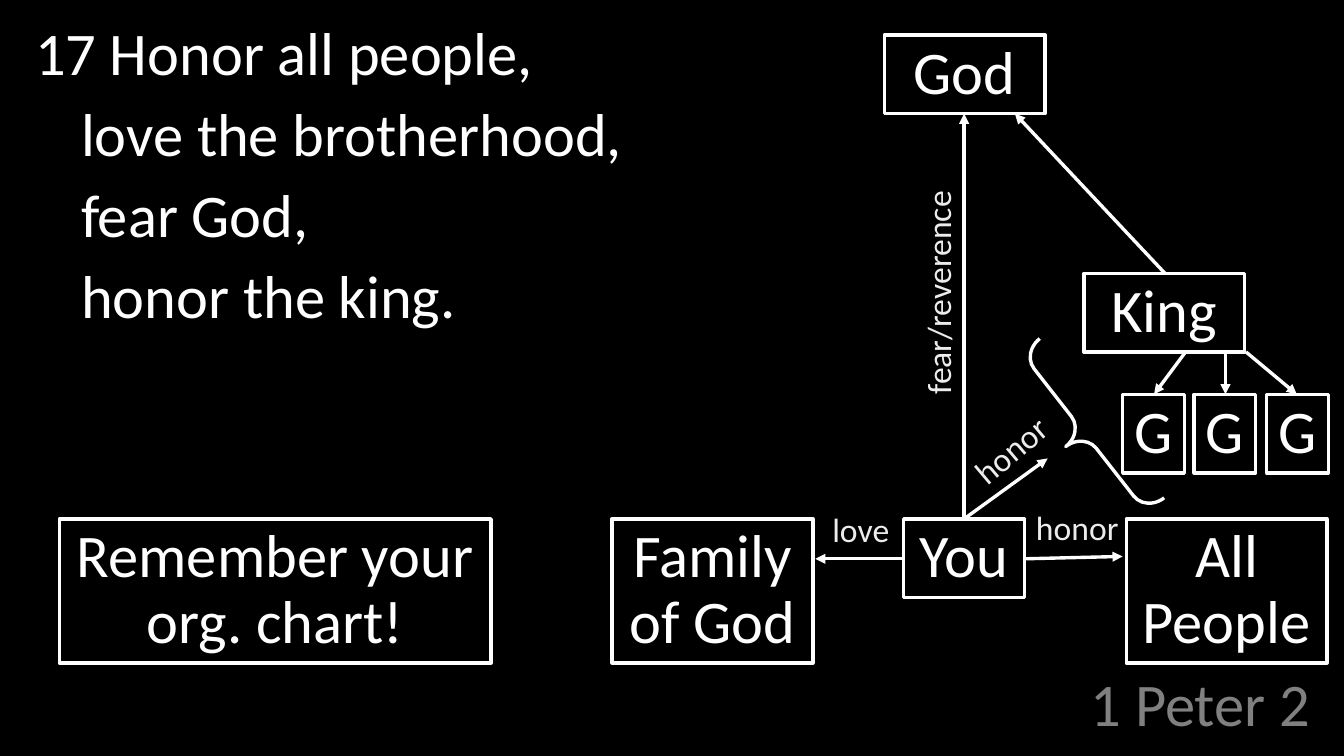
from lxml import etree
from pptx import Presentation
from pptx import util as u
from pptx.dml.color import RGBColor
from pptx.enum import shapes, text
from pptx.oxml import ns

PX = 9144
INK = {"back": "000000", "line": "FFFFFF", "label": "ECECEC", "book": "808080"}


def px(*nums):
    return [u.Emu(n * PX) for n in nums]


def hue(name):
    return RGBColor.from_string(INK[name])


def sub(node, tag, **attrs):
    return etree.SubElement(node, ns.qn(tag), attrs)


def style(para, size, ink, align, lead):
    para.alignment = align
    para.line_spacing = lead
    para.font.size = u.Pt(size)
    para.font.name = "Calibri"
    para.font.color.rgb = hue(ink)


def stroke(shape):
    shape.line.color.rgb = hue("line")
    shape.line.width = u.Pt(2)


def move(shape, box):
    shape.left, shape.top, shape.width, shape.height = px(*box)
    shape.text_frame.auto_size = text.MSO_AUTO_SIZE.NONE


def card(slide, words, box):
    shape = slide.shapes.add_shape(shapes.MSO_SHAPE.RECTANGLE, *px(*box))
    shape.shadow.inherit = False
    shape.fill.solid()
    shape.fill.fore_color.rgb = hue("back")
    stroke(shape)
    frame = shape.text_frame
    frame.text = words
    frame.word_wrap = " " in words
    frame.vertical_anchor = text.MSO_ANCHOR.MIDDLE
    style(frame.paragraphs[0], 36, "line", text.PP_ALIGN.CENTER, 0.9)


def arrow(slide, start, end):
    link = slide.shapes.add_connector(
        shapes.MSO_CONNECTOR.STRAIGHT, *px(*start, *end))
    stroke(link)
    sub(link.line._get_or_add_ln(), "a:tailEnd", type="triangle")
    sub(link._element.spPr, "a:effectLst")


def label(slide, words, box, turn):
    shape = slide.shapes.add_textbox(*px(*box))
    shape.rotation = turn
    frame = shape.text_frame
    frame.word_wrap = True
    frame.text = words
    style(frame.paragraphs[0], 20, "label", text.PP_ALIGN.CENTER, 1.0)


def brace(slide, box):
    shape = slide.shapes.add_shape(shapes.MSO_SHAPE.LEFT_BRACE, *px(*box))
    shape.shadow.inherit = False
    shape.fill.background()
    stroke(shape)
    shape.rotation = 322
    shape.adjustments[0] = 0.44
    shape.adjustments[1] = 0.5


def title(slide, box):
    shape = slide.shapes.title
    move(shape, box)
    frame = shape.text_frame
    frame.text = "1 Peter 2"
    frame.vertical_anchor = text.MSO_ANCHOR.BOTTOM
    style(frame.paragraphs[0], 36, "book", text.PP_ALIGN.RIGHT, 0.8)


def verse(slide, box):
    shape = slide.placeholders[1]
    move(shape, box)
    frame = shape.text_frame
    frame.text = "\n".join(["17 Honor all people,", "love the brotherhood,",
                            "fear God,", "honor the king."])
    for num, para in enumerate(frame.paragraphs):
        para.space_before = u.Pt(7.2)
        props = para._p.get_or_add_pPr()
        props.set("marL", str(38 * PX))
        props.set("indent", str(0 if num else -38 * PX))
        sub(props, "a:buNone")
        style(para, 36, "line", text.PP_ALIGN.LEFT, 0.95)


def chart(slide, left, top):
    def at(x, y, *size):
        return (left + x, top + y, *size)

    cards = [
        ("You", 241, 400, 100, 65),
        ("King", 390, 197, 133, 65),
        ("God", 225, 0, 133, 65),
        ("Family of God", 0, 400, 166, 119),
        ("All People", 425, 400, 166, 119),
    ]
    cards += [("G", 422 + 119 * n // 2, 297, 51, 65) for n in range(3)]
    for words, *box in cards:
        card(slide, words, at(*box))

    arrows = [
        (291, 400, 360, 350),
        (291, 400, 291, 65),
        (457, 197, 333, 65),
        (474, 262, 448, 297),
        (507, 262, 507, 297),
        (524, 262, 566, 297),
        (240, 433, 168, 433),
        (341, 433, 422, 431),
    ]
    for x1, y1, x2, y2 in arrows:
        arrow(slide, at(x1, y1), at(x2, y2))

    brace(slide, at(371, 245, 38, 167))

    labels = [
        ("love", 163, 387, 85, 0),
        ("honor", 332, 385, 105, 0),
        ("honor", 277, 321, 105, 319.8),
        ("fear/reverence", 165, 191, 209, 270),
    ]
    for words, x, y, width, turn in labels:
        label(slide, words, at(x, y, width, 44), turn)


def main():
    deck = Presentation()
    deck.slide_width, deck.slide_height = px(1111, 625)
    slide = deck.slides.add_slide(deck.slide_layouts[1])
    back = slide.background.fill
    back.solid()
    back.fore_color.rgb = hue("back")
    title(slide, (706, 556, 387, 59))
    verse(slide, (19, 12, 678, 529))
    chart(slide, 506, 29)
    card(slide, "Remember your org. chart!", (49, 429, 357, 119))
    deck.save("out.pptx")


if __name__ == "__main__":
    main()
